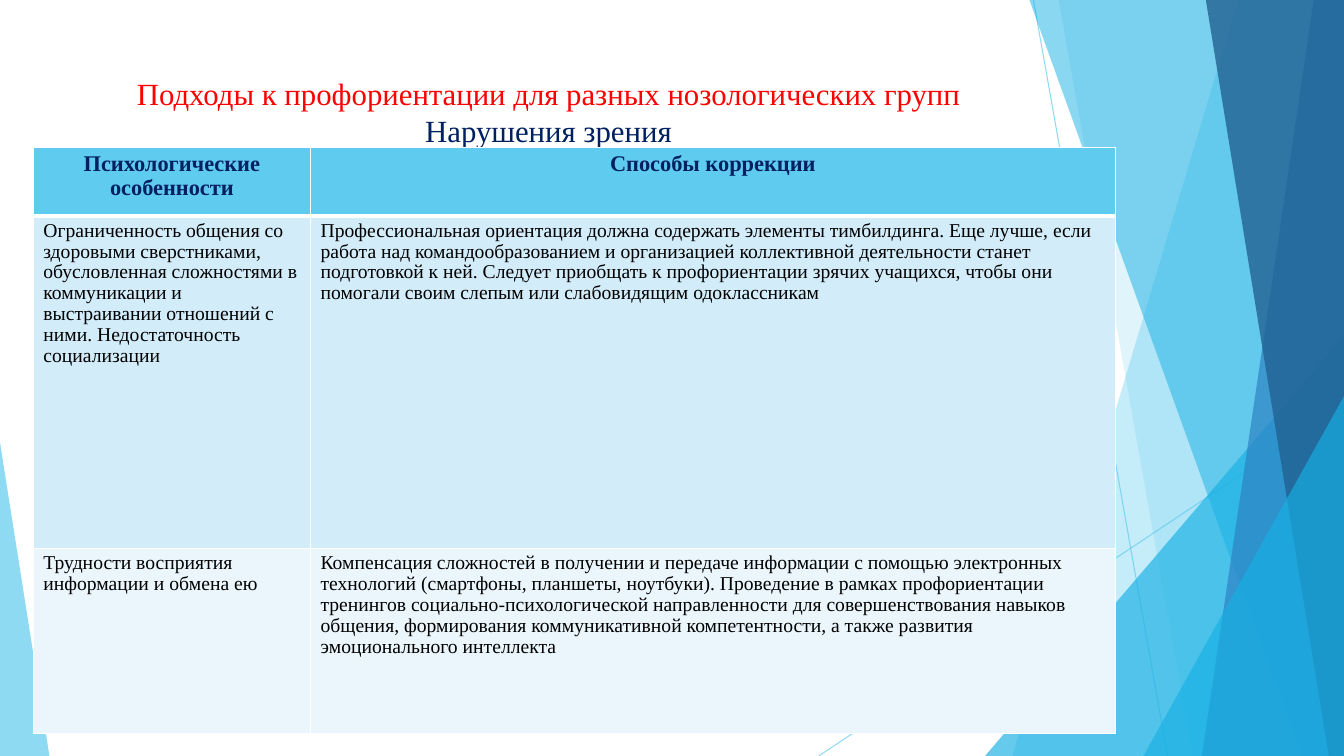
from dataclasses import dataclass

from lxml.etree import SubElement
from pptx import Presentation
from pptx.dml.color import RGBColor
from pptx.enum.shapes import MSO_CONNECTOR as Connector, MSO_SHAPE as Shape
from pptx.enum.text import MSO_ANCHOR as Anchor, PP_ALIGN as Align
from pptx.oxml.ns import qn
from pptx.util import Inches, Pt

# The grid has one-inch columns and rows.
COLUMNS, ROWS = 13.33, 7.5


@dataclass(frozen=True)
class Theme:
    font: str = "Times New Roman"
    title_size: int = 22
    header_size: int = 16
    body_size: int = 14
    sky: str = "5FCBEF"
    azure: str = "17B0E4"
    blue: str = "2E83C3"
    deep: str = "226292"
    red: str = "FF0000"
    navy: str = "002060"
    black: str = "000000"
    white: str = "FFFFFF"
    bands: tuple = ("D2ECF9", "EAF6FC")


THEME = Theme()

TITLE = [
    ("Подходы к профориентации для разных нозологических групп", THEME.red),
    ("Нарушения зрения", THEME.navy),
]
COLUMN_WIDTHS = (2.75, 7.98)
ROW_HEIGHTS = (0.68, 3.3, 1.84)
TABLE_ROWS = [
    ("Психологические особенности", "Способы коррекции"),
    (
        "Ограниченность общения со здоровыми сверстниками, обусловленная "
        "сложностями в коммуникации и выстраивании отношений с ними. "
        "Недостаточность социализации",
        "Профессиональная ориентация должна содержать элементы тимбилдинга. "
        "Еще лучше, если работа над командообразованием и организацией "
        "коллективной деятельности станет подготовкой к ней. Следует приобщать "
        "к профориентации зрячих учащихся, чтобы они помогали своим слепым "
        "или слабовидящим одоклассникам",
    ),
    (
        "Трудности восприятия информации и обмена ею",
        "Компенсация сложностей в получении и передаче информации с помощью "
        "электронных технологий (смартфоны, планшеты, ноутбуки). Проведение "
        "в рамках профориентации тренингов социально-психологической "
        "направленности для совершенствования навыков общения, формирования "
        "коммуникативной компетентности, а также развития эмоционального "
        "интеллекта",
    ),
]


def set_opacity(element, percent):
    for color in element.iter(qn("a:srgbClr")):
        SubElement(color, qn("a:alpha"), val=str(percent * 1000))


def paint(shape, color, opacity):
    shape.shadow.inherit = False
    shape.fill.solid()
    shape.fill.fore_color.rgb = RGBColor.from_string(color)
    shape.line.fill.background()
    set_opacity(shape.element.spPr, opacity)


def add_ray(page, start, end):
    ray = page.shapes.add_connector(
        Connector.STRAIGHT, *(Inches(length) for length in (*start, *end)))
    ray.line.color.rgb = RGBColor.from_string(THEME.sky)
    ray.line.width = Pt(0.75)
    properties = ray.element.spPr
    set_opacity(properties, 70)
    SubElement(properties, qn("a:effectLst"))


def add_facet(page, top, bottom, color, opacity):
    """Fill the full height from a slanted left edge to the slide's right side."""
    builder = page.shapes.build_freeform(Inches(top), 0)
    corners = [(COLUMNS, 0), (COLUMNS, ROWS), (bottom, ROWS)]
    builder.add_line_segments([(Inches(x), Inches(y)) for x, y in corners])
    paint(builder.convert_to_shape(), color, opacity)


def add_corner(page, width, height, color, opacity, on_right=True):
    """Put a right triangle in a bottom corner of the slide."""
    left = COLUMNS - width if on_right else 0
    corner = page.shapes.add_shape(
        Shape.ISOSCELES_TRIANGLE, Inches(left), Inches(ROWS - height),
        Inches(width), Inches(height))
    corner.adjustments[0] = 1 if on_right else 0
    paint(corner, color, opacity)


def add_backdrop(page):
    add_ray(page, (10.25, 0), (11.58, ROWS))
    add_ray(page, (COLUMNS, 4.03), (8.12, ROWS))
    add_facet(page, 12.28, 10.04, THEME.sky, 36)
    add_facet(page, 10.5, 11.83, THEME.sky, 20)
    add_corner(page, 3.56, 4.17, THEME.azure, 66)
    add_facet(page, 10.21, 12.91, THEME.azure, 50)
    add_facet(page, 13.03, 11.92, THEME.blue, 70)
    add_facet(page, 11.96, 13.18, THEME.deep, 80)
    add_corner(page, 1.99, 3.57, THEME.azure, 66)
    add_corner(page, 0.49, 3.11, THEME.sky, 70, on_right=False)


def style_text(para, size, color, align, bold=False):
    para.alignment = align
    for span in para.runs:
        span.font.name = THEME.font
        span.font.size = Pt(size)
        span.font.bold = bold
        span.font.color.rgb = RGBColor.from_string(color)


def add_title(page):
    box = page.shapes.add_textbox(
        Inches(0.74), Inches(0.67), Inches(9.4), Inches(1.44))
    frame = box.text_frame
    frame.word_wrap = True
    frame.vertical_anchor = Anchor.TOP
    frame.margin_top = Inches(0.07)
    frame.text = "\n".join(line for line, _ in TITLE)
    for para, (_, color) in zip(frame.paragraphs, TITLE):
        style_text(para, THEME.title_size, color, Align.CENTER)


def set_borders(cell, **widths):
    properties = cell._tc.get_or_add_tcPr()
    for side, width in widths.items():
        line = SubElement(properties, qn(f"a:ln{side}"), w=str(Pt(width)))
        fill = SubElement(line, qn("a:solidFill"))
        SubElement(fill, qn("a:srgbClr"), val=THEME.white)


def fill_cell(cell, text, row):
    is_header = row == 0
    set_borders(cell, L=1, R=1, T=3 if row == 1 else 1, B=3 if is_header else 1)
    cell.fill.solid()
    color = THEME.sky if is_header else THEME.bands[row - 1]
    cell.fill.fore_color.rgb = RGBColor.from_string(color)
    cell.text_frame.text = text
    para = cell.text_frame.paragraphs[0]
    para.line_spacing = 0.96
    if is_header:
        style_text(para, THEME.header_size, THEME.navy, Align.CENTER, bold=True)
    else:
        style_text(para, THEME.body_size, THEME.black, Align.LEFT)


def add_corrections_table(page):
    table = page.shapes.add_table(
        len(ROW_HEIGHTS), len(COLUMN_WIDTHS), Inches(0.33), Inches(1.46),
        Inches(sum(COLUMN_WIDTHS)), Inches(sum(ROW_HEIGHTS))).table
    for column, width in zip(table.columns, COLUMN_WIDTHS):
        column.width = Inches(width)
    for row, (height, texts) in enumerate(zip(ROW_HEIGHTS, TABLE_ROWS)):
        table.rows[row].height = Inches(height)
        for column, text in enumerate(texts):
            fill_cell(table.cell(row, column), text, row)


def main():
    deck = Presentation()
    deck.slide_width, deck.slide_height = Inches(COLUMNS), Inches(ROWS)
    page = deck.slides.add_slide(deck.slide_layouts[6])
    add_backdrop(page)
    add_title(page)
    add_corrections_table(page)
    deck.save("out.pptx")


if __name__ == "__main__":
    main()
